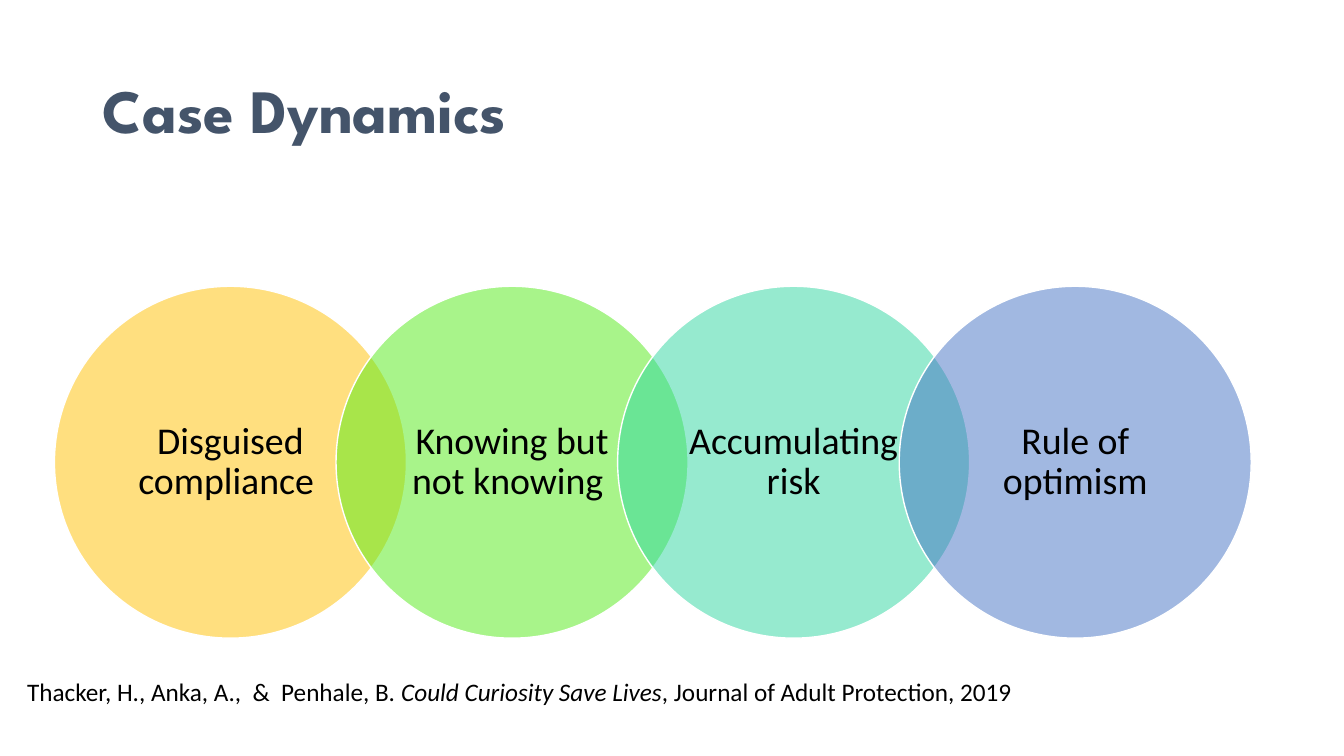
from pptx import Presentation
from pptx import util as u
from pptx.dml.color import RGBColor
from pptx.enum import shapes, text
from pptx.oxml.xmlchemy import OxmlElement

DYNAMICS = [
    ("Disguised compliance ", "FFC000"),
    ("Knowing but not knowing ", "53EB17"),
    ("Accumulating risk", "2ED7A1"),
    ("Rule of optimism", "4472C4"),
]
CITATION = [
    ("Thacker, H., Anka, A.,  &  Penhale, B. ", False),
    ("Could Curiosity Save Lives", True),
    (", Journal of Adult Protection, 2019", False),
]
OVERLAP = 0.2


def color(value):
    return RGBColor.from_string(value)


def place(shape, left, top, width, height):
    shape.left, shape.top = u.Inches(left), u.Inches(top)
    shape.width, shape.height = u.Inches(width), u.Inches(height)


def add_run(paragraph, words, size, font="Calibri", fill="000000", bold=False, italic=False):
    run = paragraph.add_run()
    run.text = words
    run.font.name = font
    run.font.size = u.Pt(size)
    run.font.bold = bold
    run.font.italic = italic
    run.font.color.rgb = color(fill)


def set_opacity(shape, percent):
    alpha = OxmlElement("a:alpha")
    alpha.set("val", str(percent * 1000))
    shape.fill._xPr.solidFill.srgbClr.append(alpha)


def add_title(slide, left, top, width, height):
    title = slide.shapes.title
    place(title, left, top, width, height)
    frame = title.text_frame
    frame.auto_size = text.MSO_AUTO_SIZE.NONE
    frame.vertical_anchor = text.MSO_ANCHOR.MIDDLE
    paragraph = frame.paragraphs[0]
    paragraph.alignment = text.PP_ALIGN.LEFT
    paragraph.line_spacing = 0.9
    add_run(paragraph, "Case Dynamics", 44, "League Spartan", "44546A", bold=True)


def add_circle(slide, left, top, diameter, label, fill):
    circle = slide.shapes.add_shape(
        shapes.MSO_SHAPE.OVAL, *map(u.Inches, (left, top, diameter, diameter)))
    circle.shadow.inherit = False
    circle.fill.solid()
    circle.fill.fore_color.rgb = color(fill)
    set_opacity(circle, 50)
    circle.line.color.rgb = color("FFFFFF")
    circle.line.width = u.Pt(1)
    frame = circle.text_frame
    frame.word_wrap = True
    frame.vertical_anchor = text.MSO_ANCHOR.MIDDLE
    frame.margin_left = frame.margin_right = u.Inches(0.19)
    frame.margin_top = frame.margin_bottom = u.Inches(0.04)
    paragraph = frame.paragraphs[0]
    paragraph.alignment = text.PP_ALIGN.CENTER
    paragraph.line_spacing = 0.9
    add_run(paragraph, label, 27)


def add_circle_chain(slide, left, top, width):
    step_share = 1 - OVERLAP
    diameter = width / (1 + step_share * (len(DYNAMICS) - 1))
    for index, (label, fill) in enumerate(DYNAMICS):
        add_circle(slide, left + index * step_share * diameter, top, diameter, label, fill)


def add_citation(slide, left, top, width, height):
    box = slide.shapes.add_textbox(*map(u.Inches, (left, top, width, height)))
    frame = box.text_frame
    frame.word_wrap = True
    frame.auto_size = text.MSO_AUTO_SIZE.SHAPE_TO_FIT_TEXT
    for words, italic in CITATION:
        add_run(frame.paragraphs[0], words, 18, italic=italic)


def main():
    presentation = Presentation()
    presentation.slide_width = u.Inches(13.33)
    presentation.slide_height = u.Inches(7.5)
    slide = presentation.slides.add_slide(presentation.slide_layouts[5])
    add_title(slide, 0.92, 0.4, 11.5, 1.45)
    add_circle_chain(slide, 0.54, 2.84, 11.87)
    add_citation(slide, 0.17, 6.66, 11.02, 0.4)
    presentation.save("out.pptx")


if __name__ == "__main__":
    main()
